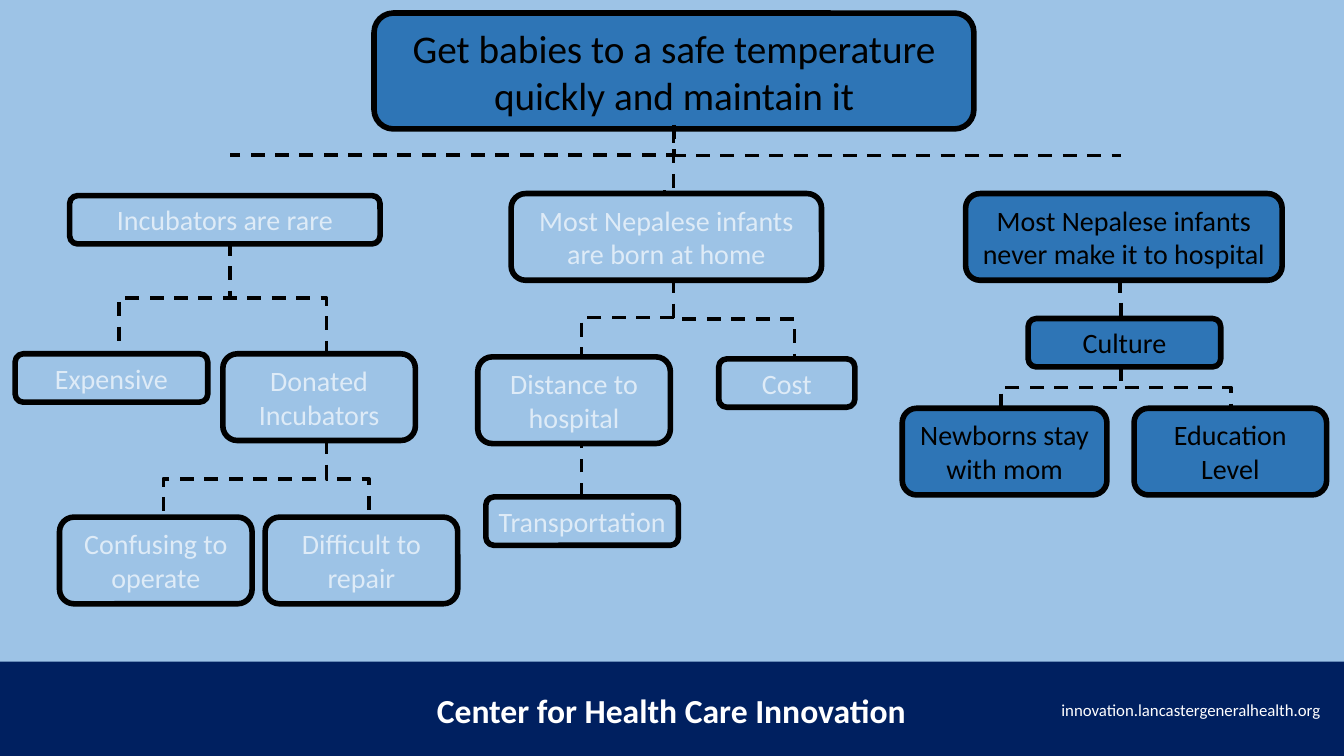
import dataclasses

import pptx
import pptx.dml.color
import pptx.enum.dml
import pptx.enum.shapes
import pptx.enum.text
import pptx.util
from lxml import etree
from pptx.oxml.ns import qn

WIDTH, HEIGHT = pptx.util.Inches(13.33), pptx.util.Inches(7.5)
COL, ROW = WIDTH / 100, HEIGHT / 100  # a grid of 100 columns by 100 rows
ONE_LINE, TWO_LINES = 6.4, 11.47  # node heights in rows
NODE_W, WIDE_W = 14.33, 23.1  # node widths in columns


@dataclasses.dataclass(frozen=True)
class Theme:
    sky: str = "9DC3E6"
    blue: str = "2E75B6"
    navy: str = "002060"
    faded: str = "DEEBF7"
    black: str = "000000"
    white: str = "FFFFFF"
    font: str = "Calibri"
    goal: float = 28
    brand: float = 24
    node: float = 20
    address: float = 12
    border: float = 4
    dash: float = 2.5


THEME = Theme()
MUTED, ACTIVE = (THEME.sky, THEME.faded), (THEME.blue, THEME.black)


def rgb(value):
    return pptx.dml.color.RGBColor.from_string(value)


def grid(col, row, cols, rows):
    """Turn grid units into left, top, width and height in EMU."""
    return [round(v) for v in (col * COL, row * ROW, cols * COL, rows * ROW)]


def write(tf, text, size, color, align, bold=False):
    tf.word_wrap = True
    p = tf.paragraphs[0]
    p.alignment = align
    r = p.add_run()
    r.text = text
    r.font.name, r.font.size, r.font.bold = THEME.font, pptx.util.Pt(size), bold
    r.font.color.rgb = rgb(color)


def add_node(s, box, text, look, size=THEME.node):
    fill, color = look
    sp = s.shapes.add_shape(pptx.enum.shapes.MSO_SHAPE.ROUNDED_RECTANGLE, *grid(*box))
    sp.shadow.inherit = False
    sp.fill.solid()
    sp.fill.fore_color.rgb = rgb(fill)
    sp.line.color.rgb = rgb(THEME.black)
    sp.line.width = pptx.util.Pt(THEME.border)
    write(sp.text_frame, text, size, color, pptx.enum.text.PP_ALIGN.CENTER)


def add_link(s, start, end, bend=0.5):
    """Dashed elbow that runs down, across at the bend share, and down again."""
    (x1, y1), (x2, y2) = [(x * COL, y * ROW) for x, y in (start, end)]
    cx, cy, dx, dy = (x1 + x2) / 2, (y1 + y2) / 2, x2 - x1, y2 - y1
    # The elbow is laid out sideways round its centre, then turned 90 degrees.
    ends = (cx - dy / 2, cy + dx / 2, cx + dy / 2, cy - dx / 2)
    link = s.shapes.add_connector(
        pptx.enum.shapes.MSO_CONNECTOR.ELBOW, *[round(v) for v in ends])
    link.line.color.rgb = rgb(THEME.black)
    link.line.width = pptx.util.Pt(THEME.dash)
    link.line.dash_style = pptx.enum.dml.MSO_LINE.DASH
    props = link._element.spPr
    props.find(qn("a:xfrm")).set("rot", "5400000")
    guides = props.find(qn("a:prstGeom")).find(qn("a:avLst"))
    etree.SubElement(guides, qn("a:gd"), name="adj1", fmla=f"val {round(bend * 100000)}")
    etree.SubElement(props, qn("a:effectLst"))


def add_links(s, left, top, links):
    for (x1, y1), (x2, y2), *bend in links:
        add_link(s, (left + x1, top + y1), (left + x2, top + y2), *bend)


def add_footer(s, box):
    left, top, cols, rows = box
    bar = s.shapes.add_shape(pptx.enum.shapes.MSO_SHAPE.RECTANGLE, *grid(*box))
    bar.shadow.inherit = False
    bar.fill.solid()
    bar.fill.fore_color.rgb = rgb(THEME.navy)
    bar.line.fill.background()
    align = pptx.enum.text.PP_ALIGN
    for x, y, w, h, text, size, side, bold in (
        (0.311, 0.24, 0.377, 0.52, "Center for Health Care Innovation",
         THEME.brand, align.CENTER, True),
        (0.715, 0.34, 0.275, 0.31, "innovation.lancastergeneralhealth.org",
         THEME.address, align.RIGHT, False),
    ):
        tb = s.shapes.add_textbox(
            *grid(left + x * cols, top + y * rows, w * cols, h * rows))
        write(tb.text_frame, text, size, THEME.white, side, bold)


def add_goal(s, box):
    add_node(s, box, "Get babies to a safe temperature quickly and maintain it",
             ACTIVE, THEME.goal)
    add_links(s, *box[:2], GOAL_LINKS)


def add_branch(s, left, top, look, nodes, links):
    for text, x, y, cols, rows in nodes:
        add_node(s, (left + x, top + y, cols, rows), text, look)
    add_links(s, left, top, links)


# Links: start, end and, where it is not halfway, the bend.
GOAL_LINKS = [
    ((22.35, 14.8), (-10.73, 18.8), 1),
    ((22.27, 15.33), (55.57, 18.8), 1),
    ((22.27, 14.8), (21.6, 23.34), 1.05),
]
# Branches: left, top, look, nodes (text, column, row, width, height), links.
BRANCHES = [
    (35.55, 25.6, MUTED, [
        ("Most Nepalese infants are born at home", 2.48, 0, WIDE_W, TWO_LINES),
        ("Distance to hospital", 0, 21.6, NODE_W, TWO_LINES),
        ("Cost", 17.93, 21.87, 10.13, ONE_LINE),
        ("Transportation", 0.6, 40.13, NODE_W, ONE_LINE),
    ], [
        ((14.63, 16.4), (7.73, 21.6), 0),
        ((14.55, 11.33), (23.55, 21.87)),
        ((7.73, 40.13), (7.73, 33.07)),
    ]),
    (67.13, 25.6, ACTIVE, [
        ("Most Nepalese infants never make it to hospital", 4.72, 0, 23.55, TWO_LINES),
        ("Culture", 9.37, 16.53, NODE_W, ONE_LINE),
        ("Newborns stay with mom", 0, 28.4, 15.23, TWO_LINES),
        ("Education Level", 17.25, 28.4, NODE_W, TWO_LINES),
    ], [
        ((16.2, 11.33), (16.27, 16.53)),
        ((16.27, 22.93), (7.35, 28.4)),
        ((16.27, 22.93), (24.45, 28.4)),
    ]),
    (1.13, 25.6, MUTED, [
        ("Incubators are rare", 4.05, 0.27, WIDE_W, ONE_LINE),
        ("Expensive", 0, 21.2, NODE_W, ONE_LINE),
        ("Donated Incubators", 15.45, 21.2, NODE_W, TWO_LINES),
        ("Confusing to operate", 3.3, 42.8, NODE_W, TWO_LINES),
        ("Difficult to repair", 18.6, 42.8, NODE_W, TWO_LINES),
    ], [
        ((15.97, 6.4), (7.72, 21.2)),
        ((15.97, 6.4), (23.17, 21.2)),
        ((23.17, 32.67), (26.32, 42.8)),
        ((23.17, 32.67), (11.02, 42.8)),
    ]),
]


def main():
    prs = pptx.Presentation()
    prs.slide_width, prs.slide_height = WIDTH, HEIGHT
    s = prs.slides.add_slide(prs.slide_layouts[6])
    s.background.fill.solid()
    s.background.fill.fore_color.rgb = rgb(THEME.sky)
    add_footer(s, (0, 87.5, 100, 12.9))
    add_goal(s, (27.83, 1.73, 44.63, 15.33))
    for branch in BRANCHES:
        add_branch(s, *branch)
    prs.save("out.pptx")


if __name__ == "__main__":
    main()
